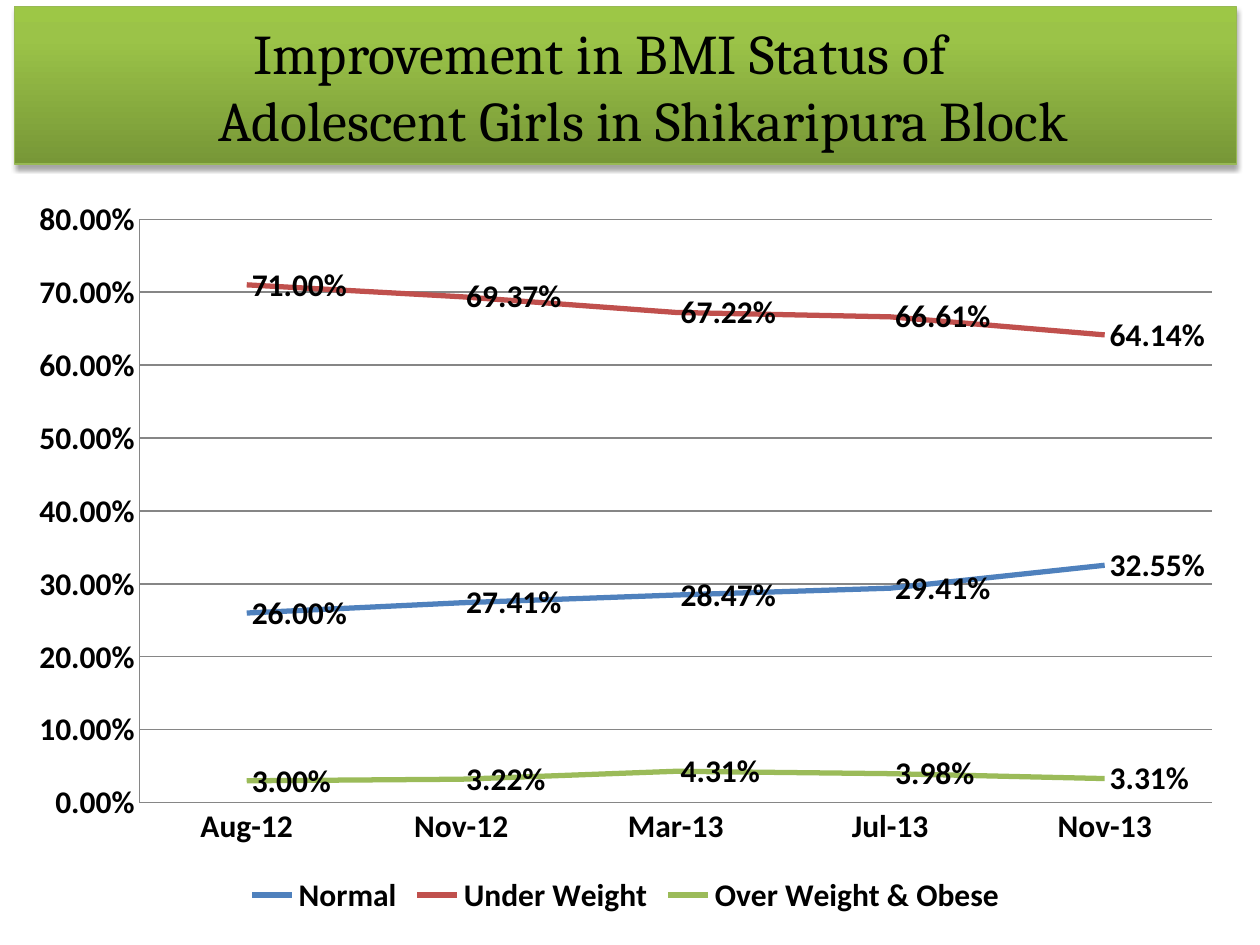
import pptx
import pptx.chart.data
import pptx.dml.color
import pptx.enum.chart
import pptx.enum.dml
import pptx.enum.shapes
import pptx.enum.text
import pptx.oxml
import pptx.oxml.ns
import pptx.util

Pt = pptx.util.Pt
RGBColor = pptx.dml.color.RGBColor

BLACK = RGBColor(0x00, 0x00, 0x00)
GRID_GREY = RGBColor(0x86, 0x86, 0x86)
BANNER_EDGE = RGBColor(0x98, 0xB9, 0x55)
BLUE = RGBColor(0x4F, 0x81, 0xBD)
RED = RGBColor(0xC0, 0x50, 0x4D)
GREEN = RGBColor(0x9B, 0xBB, 0x59)
# Banner gradient, bottom to top: (percent, colour)
BANNER_STOPS = [
    (0, RGBColor(0x77, 0x97, 0x37)),
    (80, RGBColor(0x9B, 0xC3, 0x48)),
    (100, RGBColor(0x9D, 0xC7, 0x46)),
]

TITLE_FORMAT = {"name": "Cambria", "size": Pt(32)}
CHART_FORMAT = {"name": "Calibri", "size": Pt(18), "bold": True}
PERCENT = "0.00%"

# (text, left indent) of each title line
TITLE_LINES = [
    ("Improvement in BMI Status of", Pt(0)),
    ("Adolescent Girls in Shikaripura Block", Pt(49)),
]
MONTHS = ["Aug-12", "Nov-12", "Mar-13", "Jul-13", "Nov-13"]
BMI_SERIES = [
    ("Normal", BLUE, [0.26, 0.2741, 0.2847, 0.2941, 0.3255]),
    ("Under Weight", RED, [0.71, 0.6937, 0.6722, 0.6661, 0.6414]),
    ("Over Weight & Obese", GREEN, [0.03, 0.0322, 0.0431, 0.0398, 0.0331]),
]


def apply_format(target, values):
    for name, value in values.items():
        setattr(target, name, value)


def format_font(font, values):
    apply_format(font, values)
    font.color.rgb = BLACK


def format_line(line, colour, width):
    line.color.rgb = colour
    line.width = width


def add_gradient_and_shadow(shape):
    namespace = pptx.oxml.ns.nsdecls("a")
    stops = "".join(
        f'<a:gs pos="{percent * 1000}"><a:srgbClr val="{colour}"/></a:gs>'
        for percent, colour in BANNER_STOPS
    )
    gradient = pptx.oxml.parse_xml(
        f'<a:gradFill {namespace} rotWithShape="1"><a:gsLst>{stops}</a:gsLst>'
        '<a:lin ang="16200000" scaled="0"/></a:gradFill>'
    )
    shadow = pptx.oxml.parse_xml(
        f'<a:outerShdw {namespace} blurRad="{Pt(3.1)}" dist="{Pt(1.8)}" '
        'dir="5400000" rotWithShape="0"><a:srgbClr val="000000">'
        '<a:alpha val="35000"/></a:srgbClr></a:outerShdw>'
    )
    shape.shadow.inherit = False
    properties = shape._element.spPr
    properties.find(pptx.oxml.ns.qn("a:prstGeom")).addnext(gradient)
    properties.find(pptx.oxml.ns.qn("a:effectLst")).append(shadow)


def add_banner(page, box):
    banner = page.shapes.add_shape(pptx.enum.shapes.MSO_SHAPE.RECTANGLE, *box)
    format_line(banner.line, BANNER_EDGE, Pt(0.75))
    add_gradient_and_shadow(banner)

    # Title: the second line sits further right than the first
    frame = banner.text_frame
    apply_format(frame, {
        "word_wrap": True,
        "vertical_anchor": pptx.enum.text.MSO_ANCHOR.MIDDLE,
        "margin_right": Pt(36),
    })
    for index, (text, indent) in enumerate(TITLE_LINES):
        para = frame.add_paragraph() if index else frame.paragraphs[0]
        para.alignment = pptx.enum.text.PP_ALIGN.CENTER
        para._p.get_or_add_pPr().set("marL", str(indent))
        span = para.add_run()
        span.text = text
        format_font(span.font, TITLE_FORMAT)


def add_bmi_chart(page, box):
    data = pptx.chart.data.CategoryChartData(number_format=PERCENT)
    data.categories = MONTHS
    for name, _, values in BMI_SERIES:
        data.add_series(name, values)
    chart = page.shapes.add_chart(
        pptx.enum.chart.XL_CHART_TYPE.LINE, *box, data
    ).chart
    format_font(chart.font, CHART_FORMAT)
    chart.has_title = False

    # Legend
    chart.has_legend = True
    apply_format(chart.legend, {
        "position": pptx.enum.chart.XL_LEGEND_POSITION.BOTTOM,
        "include_in_layout": False,
    })
    format_font(chart.legend.font, CHART_FORMAT)

    # Axes
    for axis in (chart.category_axis, chart.value_axis):
        axis.major_tick_mark = pptx.enum.chart.XL_TICK_MARK.NONE
        format_line(axis.format.line, GRID_GREY, Pt(0.75))
        format_font(axis.tick_labels.font, CHART_FORMAT)
    apply_format(chart.value_axis, {
        "minimum_scale": 0,
        "maximum_scale": 0.8,
        "major_unit": 0.1,
        "has_major_gridlines": True,
    })
    format_line(chart.value_axis.major_gridlines.format.line, GRID_GREY, Pt(0.75))
    apply_format(chart.value_axis.tick_labels, {
        "number_format": PERCENT,
        "number_format_is_linked": False,
    })

    # Lines and their value labels
    chart.plots[0].vary_by_categories = False
    for series, (_, colour, _) in zip(chart.plots[0].series, BMI_SERIES):
        series.smooth = False
        series.marker.style = pptx.enum.chart.XL_MARKER_STYLE.NONE
        format_line(series.format.line, colour, Pt(3))
        apply_format(series.data_labels, {
            "show_value": True,
            "number_format": PERCENT,
            "number_format_is_linked": False,
            "position": pptx.enum.chart.XL_LABEL_POSITION.RIGHT,
        })
        format_font(series.data_labels.font, CHART_FORMAT)


def main():
    deck = pptx.Presentation()
    deck.slide_width, deck.slide_height = Pt(720), Pt(540)
    page = deck.slides.add_slide(deck.slide_layouts[6])
    add_banner(page, (Pt(8.5), Pt(3.75), Pt(698), Pt(90)))
    add_bmi_chart(page, (Pt(8.5), Pt(106), Pt(698), Pt(420)))
    deck.save("out.pptx")


if __name__ == "__main__":
    main()
